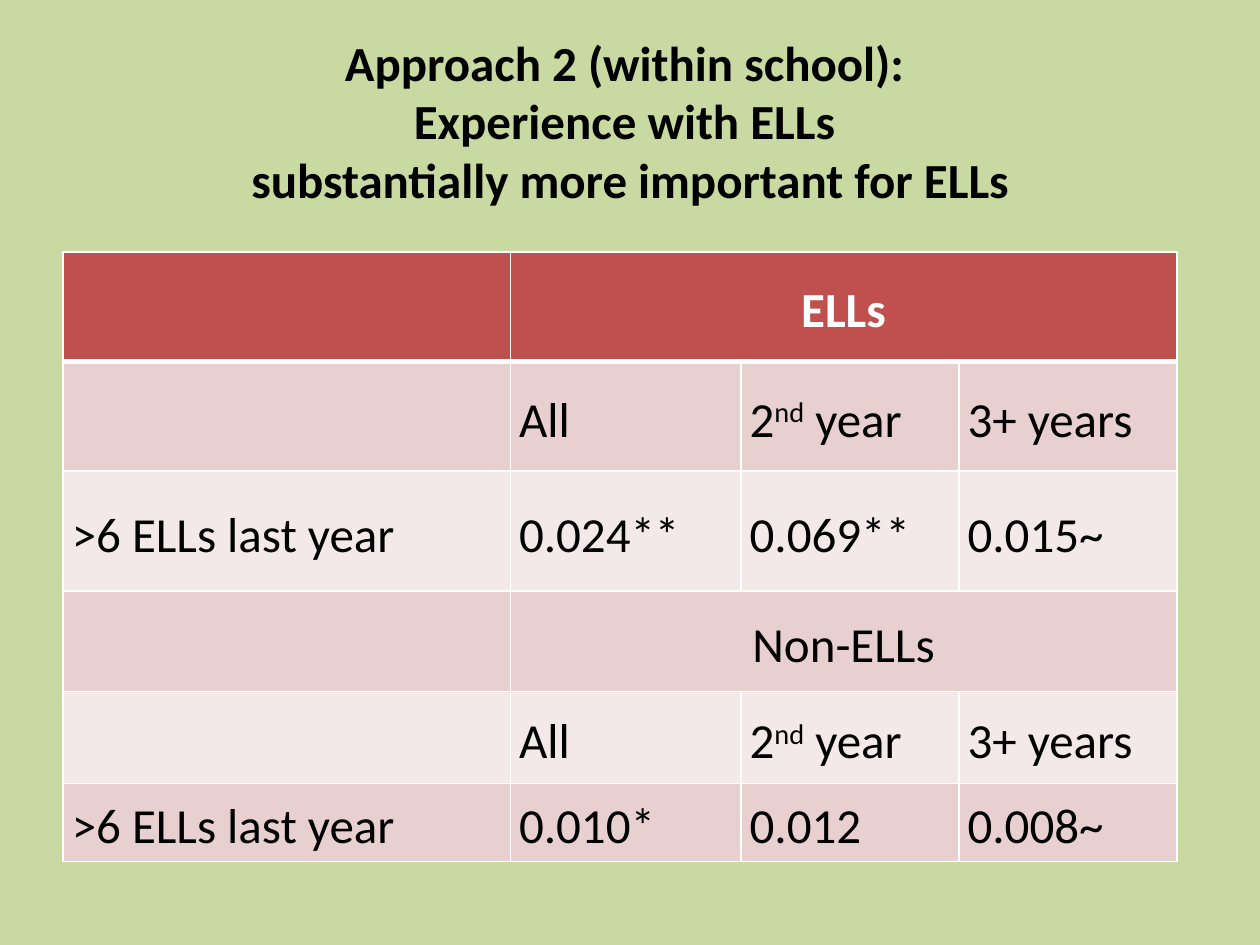
from lxml import etree
from pptx import Presentation
from pptx import util as u
from pptx.dml.color import RGBColor
from pptx.enum import text
from pptx.oxml.ns import qn

THEME = {
    "font": "Calibri", "size": 28, "background": "C8DAA2", "ink": "000000",
    "header": "C0504D", "bands": ("E8D0D0", "F4E9E9"), "header_ink": "FFFFFF",
    "border": "FFFFFF", "thin": 1, "thick": 3,
}
TITLE = ["Approach 2 (within school): ", "Experience with ELLs ",
         "substantially more important for ELLs"]
PERIODS = ["", "All", ("2", "nd", " year"), "3+ years"]
RESULTS = [
    ["", "ELLs"],
    PERIODS,
    [">6 ELLs last year", "0.024**", "0.069**", "0.015~"],
    ["", "Non-ELLs"],
    PERIODS,
    [">6 ELLs last year", "0.010*", "0.012", "0.008~"],
]
COLUMN_WIDTHS = [3.55, 1.83, 1.73, 1.73]
ROW_HEIGHTS = [0.87, 0.87, 0.95, 0.8, 0.73, 0.62]


def colour(name):
    return RGBColor.from_string(name)


def style(paragraph, ink, bold):
    font = paragraph.font
    font.name, font.size, font.bold = THEME["font"], u.Pt(THEME["size"]), bold
    font.color.rgb = colour(ink)


def add_borders(cell, row):
    properties = cell._tc.get_or_add_tcPr()
    header_edge = {0: "lnB", 1: "lnT"}.get(row)
    for side in ("lnL", "lnR", "lnT", "lnB"):
        points = THEME["thick" if side == header_edge else "thin"]
        line = etree.SubElement(properties, qn(f"a:{side}"), w=str(u.Pt(points)))
        fill = etree.SubElement(line, qn("a:solidFill"))
        etree.SubElement(fill, qn("a:srgbClr"), val=THEME["border"])


def write(cell, content, ink, bold, centred):
    cell.vertical_anchor = text.MSO_ANCHOR.MIDDLE
    cell.margin_left = cell.margin_right = u.Inches(0.07)
    cell.margin_top = cell.margin_bottom = 0
    paragraph = cell.text_frame.paragraphs[0]
    paragraph.line_spacing = 1.15
    paragraph.alignment = text.PP_ALIGN.CENTER if centred else text.PP_ALIGN.LEFT
    style(paragraph, ink, bold)
    parts = content if isinstance(content, tuple) else (content,)
    for part in parts:
        run = paragraph.add_run()
        run.text = part
        if part == "nd":
            run.font._element.set("baseline", "30000")


def add_title(slide):
    title = slide.shapes.title
    title.left, title.top = u.Inches(0.5), u.Inches(0.33)
    title.width, title.height = u.Inches(9), u.Inches(1.25)
    frame = title.text_frame
    frame.text = "\v".join(TITLE)
    frame.word_wrap = True
    frame.auto_size = text.MSO_AUTO_SIZE.NONE
    frame.vertical_anchor = text.MSO_ANCHOR.MIDDLE
    frame.paragraphs[0].alignment = text.PP_ALIGN.CENTER
    style(frame.paragraphs[0], THEME["ink"], True)


def add_results(slide):
    results = slide.shapes.add_table(
        len(RESULTS), len(COLUMN_WIDTHS), u.Inches(0.5), u.Inches(2),
        u.Inches(sum(COLUMN_WIDTHS)), u.Inches(sum(ROW_HEIGHTS))).table
    for column, width in zip(results.columns, COLUMN_WIDTHS):
        column.width = u.Inches(width)
    for row, height in zip(results.rows, ROW_HEIGHTS):
        row.height = u.Inches(height)
    for r, contents in enumerate(RESULTS):
        is_header, is_group = r == 0, len(contents) == 2
        ground = THEME["header"] if is_header else THEME["bands"][(r - 1) % 2]
        ink = THEME["header_ink" if is_header else "ink"]
        for c in range(len(COLUMN_WIDTHS)):
            cell = results.cell(r, c)
            add_borders(cell, r)
            cell.fill.solid()
            cell.fill.fore_color.rgb = colour(ground)
            if c < len(contents) and contents[c]:
                write(cell, contents[c], ink, is_header, is_group)
        if is_group:
            results.cell(r, 1).merge(results.cell(r, len(COLUMN_WIDTHS) - 1))


def main():
    deck = Presentation()
    deck.slide_width, deck.slide_height = u.Inches(10), u.Inches(7.5)
    slide = deck.slides.add_slide(deck.slide_layouts[5])
    slide.background.fill.solid()
    slide.background.fill.fore_color.rgb = colour(THEME["background"])
    add_title(slide)
    add_results(slide)
    deck.save("out.pptx")


if __name__ == "__main__":
    main()
